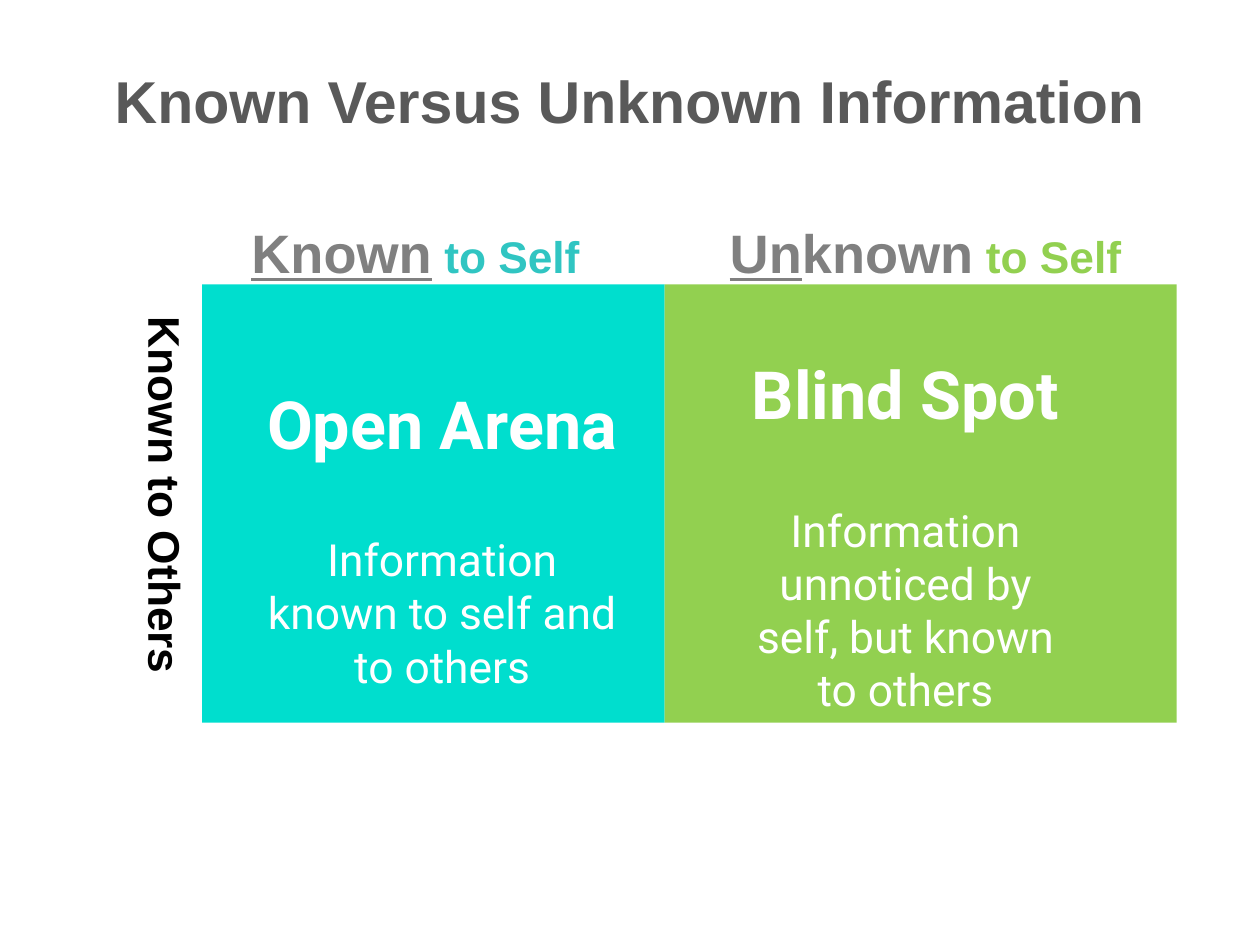
"""Build the slide on known versus unknown information."""
from pptx import Presentation
from pptx import util as u
from pptx.dml.color import RGBColor
from pptx.enum import shapes, text

TEAL = RGBColor(0x00, 0xDE, 0xCE)
TEAL_TEXT = RGBColor(0x30, 0xC5, 0xC2)
GREEN = RGBColor(0x92, 0xD0, 0x50)
GREY = RGBColor(0x80, 0x80, 0x80)
DARK = RGBColor(0x59, 0x59, 0x59)
BLACK = RGBColor(0, 0, 0)
WHITE = RGBColor(0xFF, 0xFF, 0xFF)

TITLE = "Known Versus Unknown Information"
ROW_LABEL = "Known to Others"
ROW_LEFT, ROW_TOP, ROW_HEIGHT = 2.28, 3.21, 4.95
HEADING_TOP = 2.42
WIDE, NARROW = (0.14, 0.07), (0.06, 0.06)

QUADRANTS = [
    dict(width=5.22, fill=TEAL, name="Open Arena",
         detail="Information known to self and to others",
         box=(2.78, 4.25, 4.42, 3.68), heading_box=(2.69, HEADING_TOP, 4, 0.38),
         heading=[("Known", 44, GREY, True), (" to Self", 36, TEAL_TEXT, False)]),
    dict(width=5.78, fill=GREEN, name="Blind Spot",
         detail="Information unnoticed by self, but known to others",
         box=(8.22, 3.92, 4, 4.25), heading_box=(8.03, HEADING_TOP, 4.83, 0.53),
         heading=[("Un", 44, GREY, True), ("known", 44, GREY, False),
                  (" to Self", 36, GREEN, False)]),
]


def add_box(s, at, insets):
    sp = s.shapes.add_textbox(*map(u.Inches, at))
    tf = sp.text_frame
    tf.word_wrap = True
    tf.margin_left = tf.margin_right = u.Inches(insets[0])
    tf.margin_top = tf.margin_bottom = u.Inches(insets[1])
    return sp


def style(p, size, color, name="Arial", bold=True, align=text.PP_ALIGN.CENTER):
    p.alignment = align
    p.font.name, p.font.size, p.font.bold = name, u.Pt(size), bold
    p.font.color.rgb = color


def add_line(s, at, insets, words, size, color, align=text.PP_ALIGN.CENTER):
    sp = add_box(s, at, insets)
    p = sp.text_frame.paragraphs[0]
    p.text = words
    style(p, size, color, align=align)
    return sp


def add_tile(s, left, width, fill):
    sp = s.shapes.add_shape(shapes.MSO_SHAPE.RECTANGLE, *map(
        u.Inches, (left, ROW_TOP, width, ROW_HEIGHT)))
    sp.shadow.inherit = False
    sp.fill.solid()
    sp.fill.fore_color.rgb = fill
    sp.line.fill.background()


def add_description(s, at, name, detail):
    tf = add_box(s, at, WIDE).text_frame
    tf.auto_size = text.MSO_AUTO_SIZE.SHAPE_TO_FIT_TEXT
    p = tf.paragraphs[0]
    p.text = name
    p.space_after = u.Pt(57)
    style(p, 54, WHITE, "Roboto")
    p = tf.add_paragraph()
    p.text = detail
    style(p, 36, WHITE, "Roboto", bold=False)


def add_heading(s, at, parts):
    p = add_box(s, at, NARROW).text_frame.paragraphs[0]
    p.alignment = text.PP_ALIGN.CENTER
    p.font.name, p.font.bold = "Arial", True
    for words, size, color, underline in parts:
        r = p.add_run()
        r.text = words
        r.font.name, r.font.bold = "Arial", True
        r.font.size, r.font.underline = u.Pt(size), underline
        r.font.color.rgb = color


def main():
    prs = Presentation()
    prs.slide_width, prs.slide_height = u.Inches(14.22), u.Inches(10.67)
    s = prs.slides.add_slide(prs.slide_layouts[6])

    title = add_line(s, (0, 0.24, 14.22, 1.78), WIDE, TITLE, 48, DARK)
    title.text_frame.vertical_anchor = text.MSO_ANCHOR.MIDDLE

    left = ROW_LEFT
    for q in QUADRANTS:
        add_tile(s, left, q["width"], q["fill"])
        add_description(s, q["box"], q["name"], q["detail"])
        add_heading(s, q["heading_box"], q["heading"])
        left += q["width"]

    label = add_line(s, (-0.41, 5.02, 4.58, 0.71), NARROW, ROW_LABEL, 36, BLACK,
                     text.PP_ALIGN.RIGHT)
    label.rotation = 90
    prs.save("out.pptx")


if __name__ == "__main__":
    main()
